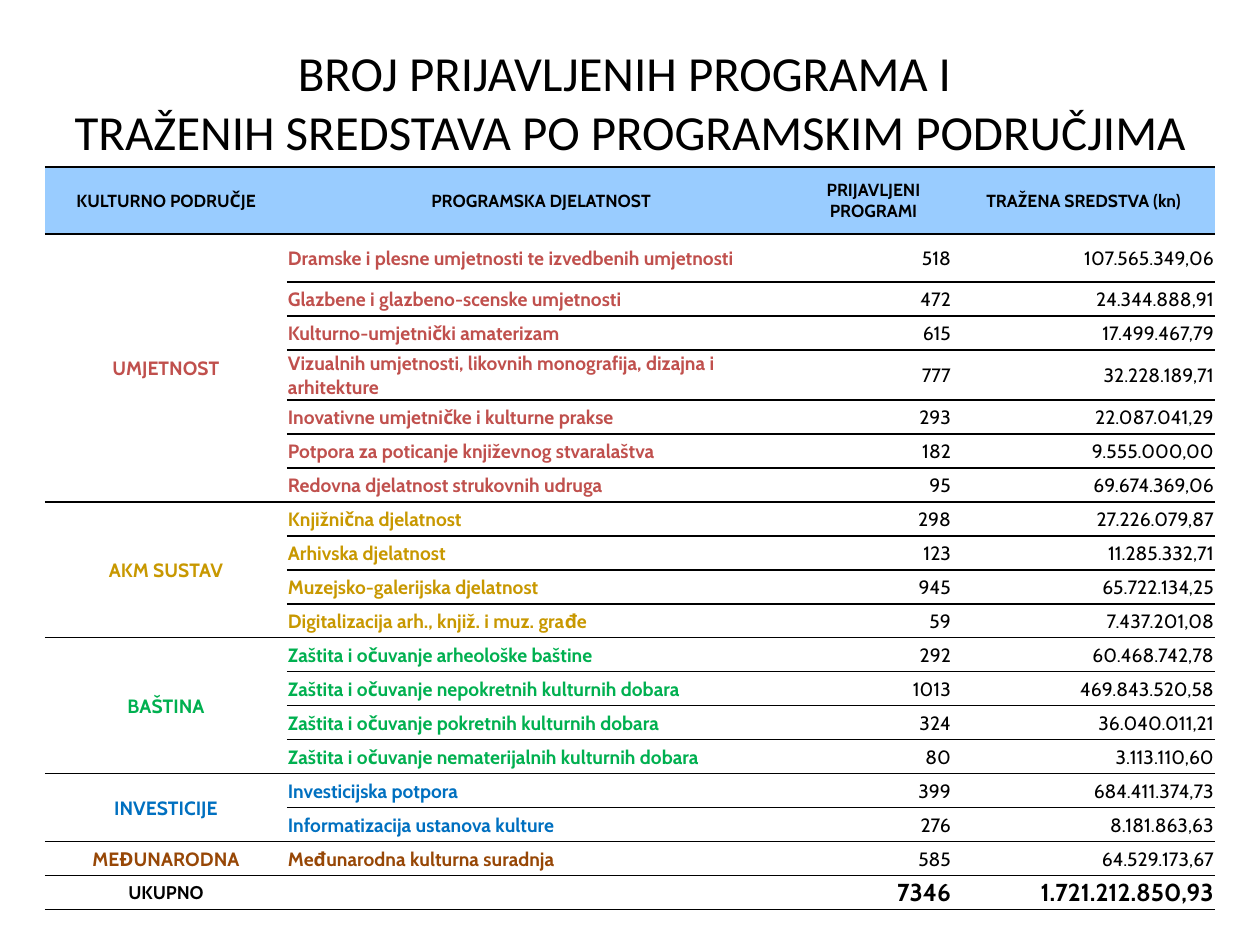
import pptx
import pptx.util
import pptx.dml.color
import pptx.enum.text
import pptx.oxml
from pptx.oxml.ns import nsdecls

RGB = pptx.dml.color.RGBColor
ALIGN = pptx.enum.text.PP_ALIGN
MIDDLE = pptx.enum.text.MSO_ANCHOR.MIDDLE

BLACK = RGB(0x00, 0x00, 0x00)
HEADER_BLUE = RGB(0x99, 0xCC, 0xFF)
RED = RGB(0xC0, 0x50, 0x4D)
GOLD = RGB(0xC8, 0x98, 0x00)
GREEN = RGB(0x00, 0xB0, 0x50)
BLUE = RGB(0x00, 0x70, 0xC0)
BROWN = RGB(0x97, 0x47, 0x06)

TITLE = ["BROJ PRIJAVLJENIH PROGRAMA I ",
         "TRAŽENIH SREDSTAVA PO PROGRAMSKIM PODRUČJIMA"]
HEADER = ["KULTURNO PODRUČJE", "PROGRAMSKA DJELATNOST",
          "PRIJAVLJENI PROGRAMI", "TRAŽENA SREDSTVA (kn)"]
AREAS = [
    ("UMJETNOST", RED, [
        ("Dramske i plesne umjetnosti te izvedbenih umjetnosti", "518", "107.565.349,06"),
        ("Glazbene i glazbeno-scenske umjetnosti", "472", "24.344.888,91"),
        ("Kulturno-umjetnički amaterizam", "615", "17.499.467,79"),
        ("Vizualnih umjetnosti, likovnih monografija, dizajna i arhitekture",
         "777", "32.228.189,71"),
        ("Inovativne umjetničke i kulturne prakse", "293", "22.087.041,29"),
        ("Potpora za poticanje književnog stvaralaštva", "182", "9.555.000,00"),
        ("Redovna djelatnost strukovnih udruga", "95", "69.674.369,06"),
    ]),
    ("AKM SUSTAV", GOLD, [
        ("Knjižnična djelatnost", "298", "27.226.079,87"),
        ("Arhivska djelatnost", "123", "11.285.332,71"),
        ("Muzejsko-galerijska djelatnost", "945", "65.722.134,25"),
        ("Digitalizacija arh., knjiž. i muz. građe", "59", "7.437.201,08"),
    ]),
    ("BAŠTINA", GREEN, [
        ("Zaštita i očuvanje arheološke baštine", "292", "60.468.742,78"),
        ("Zaštita i očuvanje nepokretnih kulturnih dobara", "1013", "469.843.520,58"),
        ("Zaštita i očuvanje pokretnih kulturnih dobara", "324", "36.040.011,21"),
        ("Zaštita i očuvanje nematerijalnih kulturnih dobara", "80", "3.113.110,60"),
    ]),
    ("INVESTICIJE", BLUE, [
        ("Investicijska potpora", "399", "684.411.374,73"),
        ("Informatizacija ustanova kulture", "276", "8.181.863,63"),
    ]),
    ("MEĐUNARODNA", BROWN, [
        ("Međunarodna kulturna suradnja", "585", "64.529.173,67"),
    ]),
]
TOTAL = ("UKUPNO", "7346", "1.721.212.850,93")

COLUMN_WIDTHS = [242, 508, 157, 263]
ROW_HEIGHT = 34
TALL_ROWS = {0: 67, 1: 48, 4: 50}


def px(n):
    return pptx.util.Emu(n * 914400 // 126)


def add_run(paragraph, text, font, size, color, bold):
    run = paragraph.add_run()
    run.text = text
    run.font.name = font
    run.font.size = pptx.util.Pt(size)
    run.font.color.rgb = color
    run.font.bold = bold


def set_borders(cell):
    """Draw black rules above and below a visible cell, and nothing at its sides."""
    rule = '<a:solidFill><a:srgbClr val="000000"/></a:solidFill>'
    for side in ("lnL", "lnR", "lnT", "lnB"):
        ruled = side in ("lnT", "lnB") and not cell.is_spanned
        cell._tc.get_or_add_tcPr().append(pptx.oxml.parse_xml(
            f'<a:{side} w="12700" {nsdecls("a")}>'
            f'{rule if ruled else "<a:noFill/>"}</a:{side}>'))


def format_cell(cell, fill=None):
    cell.vertical_anchor = MIDDLE
    cell.margin_left = cell.margin_right = cell.margin_top = px(1)
    cell.margin_bottom = 0
    set_borders(cell)
    if fill is None:
        cell.fill.background()
    else:
        cell.fill.solid()
        cell.fill.fore_color.rgb = fill
    paragraph = cell.text_frame.paragraphs[0]
    if not paragraph.runs:  # keeps an empty cell from stretching its row
        paragraph._p.append(pptx.oxml.parse_xml(
            f'<a:endParaRPr sz="1100" {nsdecls("a")}/>'))


def write(cell, text, align, size=11, color=BLACK, bold=True):
    paragraph = cell.text_frame.paragraphs[0]
    paragraph.alignment = align
    add_run(paragraph, text, "Cabin", size, color, bold)


def add_title(slide):
    title = slide.shapes.title
    title.left, title.top, title.width, title.height = px(0), px(36), px(1260), px(131)
    frame = title.text_frame
    frame.word_wrap = True
    frame.auto_size = pptx.enum.text.MSO_AUTO_SIZE.NONE
    frame.vertical_anchor = pptx.enum.text.MSO_ANCHOR.TOP
    for i, line in enumerate(TITLE):
        paragraph = frame.add_paragraph() if i else frame.paragraphs[0]
        paragraph.alignment = ALIGN.CENTER
        paragraph.space_before = 0
        add_run(paragraph, line, "Calibri", 28, BLACK, False)


def add_programme_table(slide):
    row_count = sum(len(programmes) for _, _, programmes in AREAS) + 2
    heights = [TALL_ROWS.get(i, ROW_HEIGHT) for i in range(row_count)]
    table = slide.shapes.add_table(
        row_count, len(HEADER), px(45), px(167),
        px(sum(COLUMN_WIDTHS)), px(sum(heights))).table
    table.first_row = table.horz_banding = False
    for column, width in zip(table.columns, COLUMN_WIDTHS):
        column.width = px(width)
    for row, height in zip(table.rows, heights):
        row.height = px(height)

    for c, heading in enumerate(HEADER):
        write(table.cell(0, c), heading, ALIGN.CENTER, size=10)

    r = 1
    for area, color, programmes in AREAS:
        area_cell = table.cell(r, 0)
        if len(programmes) > 1:
            area_cell.merge(table.cell(r + len(programmes) - 1, 0))
        write(area_cell, area, ALIGN.CENTER, color=color)
        for programme, count, amount in programmes:
            write(table.cell(r, 1), programme, ALIGN.LEFT, color=color)
            write(table.cell(r, 2), count, ALIGN.RIGHT, bold=False)
            write(table.cell(r, 3), amount, ALIGN.RIGHT, bold=False)
            r += 1

    label, count, amount = TOTAL
    write(table.cell(r, 0), label, ALIGN.CENTER, size=10.5)
    write(table.cell(r, 2), count, ALIGN.RIGHT, size=14)
    write(table.cell(r, 3), amount, ALIGN.RIGHT, size=14)

    for i, row in enumerate(table.rows):
        for cell in row.cells:
            format_cell(cell, HEADER_BLUE if i == 0 else None)


def main():
    deck = pptx.Presentation()
    deck.slide_width, deck.slide_height = px(1260), px(945)
    slide = deck.slides.add_slide(deck.slide_layouts[5])
    add_title(slide)
    add_programme_table(slide)
    deck.save("out.pptx")


if __name__ == "__main__":
    main()
